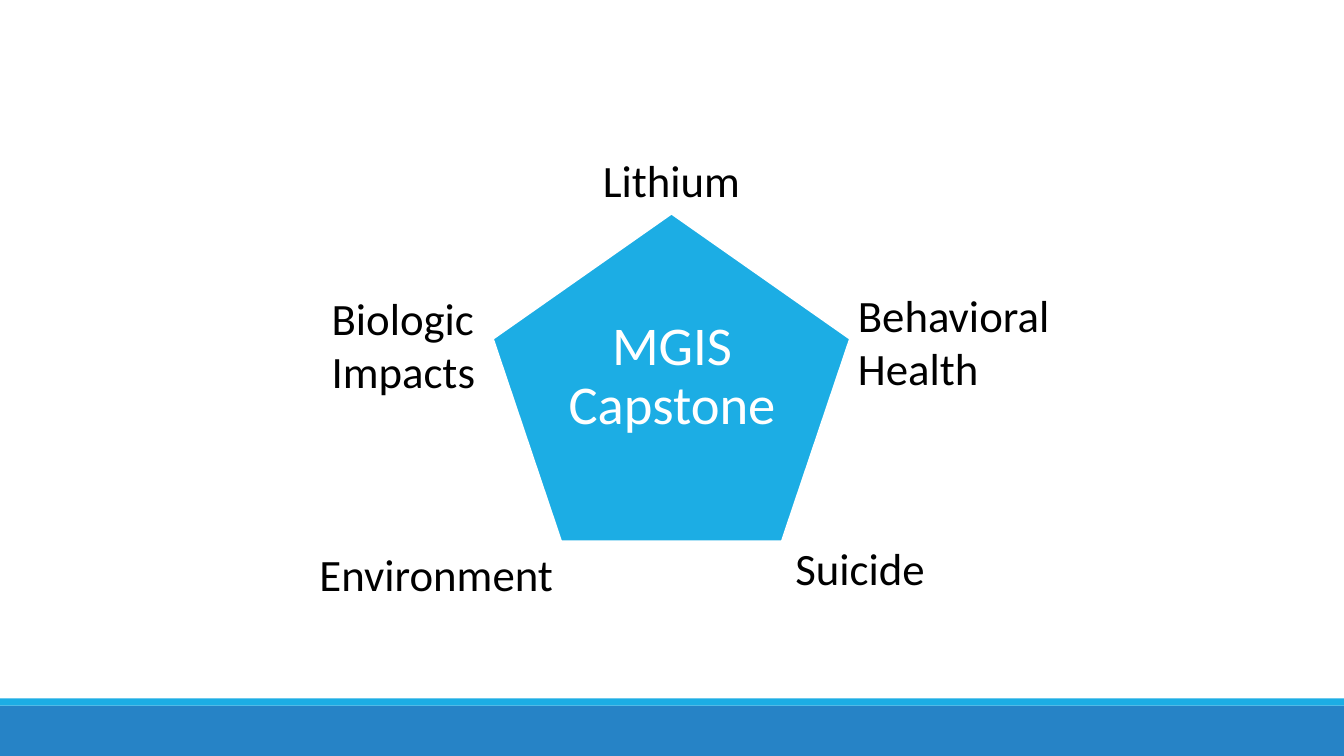
from dataclasses import dataclass

import pptx
import pptx.dml.color
import pptx.enum.shapes
import pptx.enum.text
import pptx.util

Inches = pptx.util.Inches
SHAPE = pptx.enum.shapes.MSO_SHAPE
ALIGN = pptx.enum.text.PP_ALIGN
ANCHOR = pptx.enum.text.MSO_ANCHOR
AUTO_SIZE = pptx.enum.text.MSO_AUTO_SIZE

COLORS = {"sky": "1CADE4", "blue": "2683C6", "white": "FFFFFF", "black": "000000"}

LABEL_FRAME = {"word_wrap": False, "auto_size": AUTO_SIZE.SHAPE_TO_FIT_TEXT}
LABEL_PARA = {"alignment": ALIGN.LEFT}
LABEL_FONT = {"name": "Calibri", "size": pptx.util.Pt(32)}

CENTER_FRAME = {
    "word_wrap": True,
    "vertical_anchor": ANCHOR.MIDDLE,
    **{f"margin_{side}": Inches(0.05) for side in ("left", "top", "right", "bottom")},
}
CENTER_PARA = {"alignment": ALIGN.CENTER, "line_spacing": 0.9}
CENTER_FONT = {"name": "Calibri", "size": pptx.util.Pt(39)}


@dataclass(frozen=True)
class Area:
    left: float
    top: float
    width: float
    height: float

    def lengths(self) -> list[int]:
        return [Inches(v) for v in (self.left, self.top, self.width, self.height)]


@dataclass(frozen=True)
class Figure:
    kind: int
    area: Area
    fill: str
    line: str | None = None


@dataclass(frozen=True)
class Label:
    lines: tuple[str, ...]
    area: Area


FIGURES = [
    Figure(SHAPE.RECTANGLE, Area(0, 7, 13.33, 0.5), "blue"),
    Figure(SHAPE.RECTANGLE, Area(0, 6.93, 13.33, 0.07), "sky"),
    Figure(SHAPE.REGULAR_PENTAGON, Area(4.89, 2.12, 3.54, 3.25), "sky", "white"),
]

CENTER = Label(("MGIS Capstone",), Area(5.57, 2.89, 2.19, 1.71))

CORNERS = [
    Label(("Lithium",), Area(5.88, 1.47, 1.58, 0.64)),
    Label(("Environment",), Area(3.07, 5.37, 2.54, 0.64)),
    Label(("Biologic", "Impacts"), Area(3.19, 2.83, 1.73, 1.18)),
    Label(("Behavioral", "Health"), Area(8.41, 2.8, 2.22, 1.18)),
    Label(("Suicide",), Area(7.79, 5.32, 1.5, 0.64)),
]


def color(name: str) -> pptx.dml.color.RGBColor:
    return pptx.dml.color.RGBColor.from_string(COLORS[name])


def apply(target: object, values: dict) -> None:
    for name, value in values.items():
        setattr(target, name, value)


def draw_figure(page, figure: Figure) -> None:
    shape = page.shapes.add_shape(figure.kind, *figure.area.lengths())
    shape.shadow.inherit = False
    shape.fill.solid()
    shape.fill.fore_color.rgb = color(figure.fill)
    if figure.line:
        shape.line.color.rgb = color(figure.line)
        shape.line.width = pptx.util.Pt(1.25)
    else:
        shape.line.fill.background()


def draw_label(page, label: Label, frame_format: dict, para_format: dict,
               font_format: dict, ink: str) -> None:
    box = page.shapes.add_textbox(*label.area.lengths())
    frame = box.text_frame
    apply(frame, frame_format)
    frame.text = "\n".join(label.lines)
    for para in frame.paragraphs:
        apply(para, para_format)
        for span in para.runs:
            apply(span.font, font_format)
            span.font.color.rgb = color(ink)


def main() -> None:
    deck = pptx.Presentation()
    deck.slide_width, deck.slide_height = Inches(13.33), Inches(7.5)
    page = deck.slides.add_slide(deck.slide_layouts[6])

    # Footer bars and pentagon
    for figure in FIGURES:
        draw_figure(page, figure)

    # Title inside the pentagon
    draw_label(page, CENTER, CENTER_FRAME, CENTER_PARA, CENTER_FONT, "white")

    # Topics around the corners
    for corner in CORNERS:
        draw_label(page, corner, LABEL_FRAME, LABEL_PARA, LABEL_FONT, "black")

    deck.save("out.pptx")


if __name__ == "__main__":
    main()
